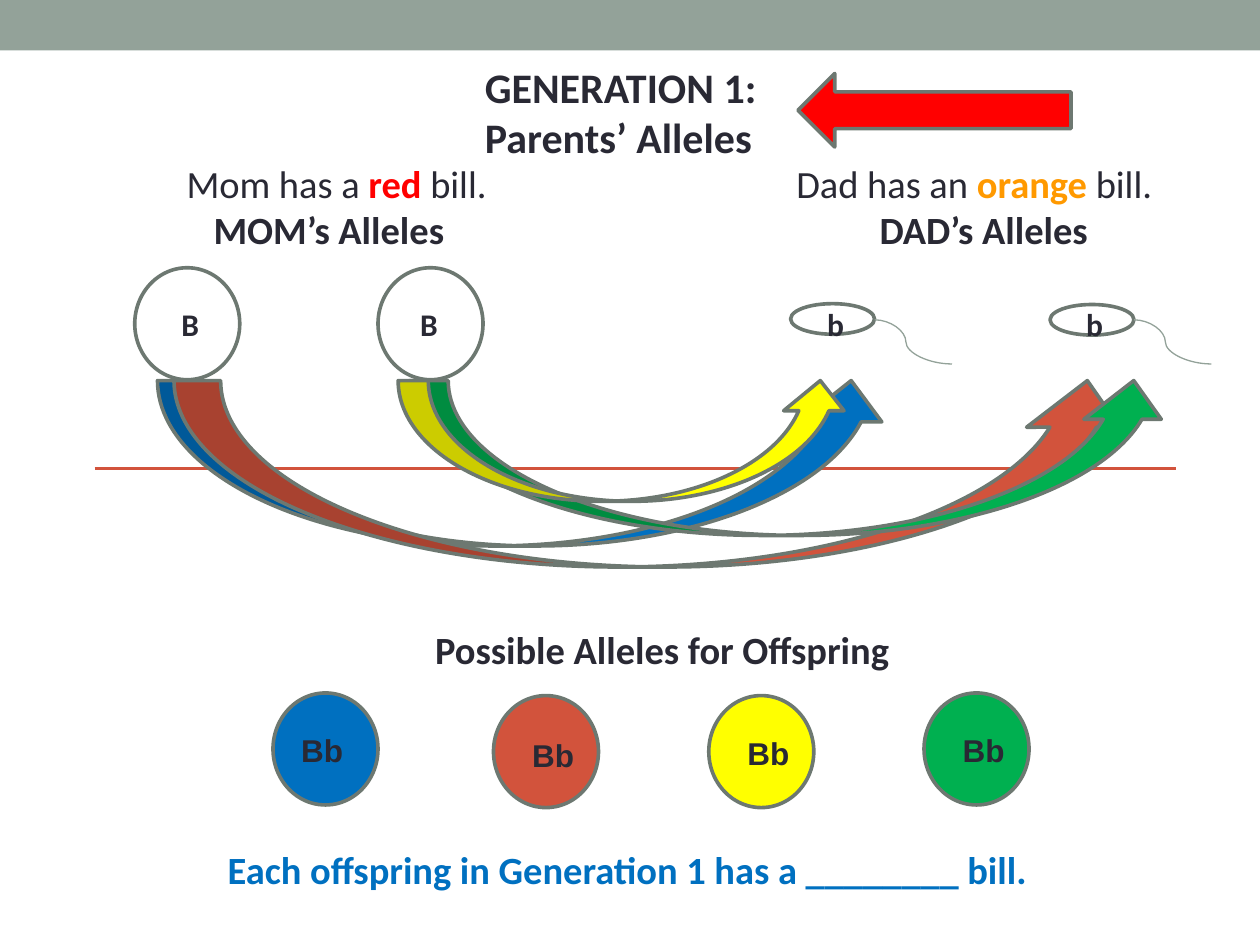
from dataclasses import dataclass
from typing import Optional

import lxml.etree
import pptx
import pptx.dml.color
import pptx.enum.shapes
import pptx.enum.text
import pptx.oxml.ns
import pptx.util

Pt = pptx.util.Pt
RGBColor = pptx.dml.color.RGBColor
Preset = pptx.enum.shapes.MSO_SHAPE
Connector = pptx.enum.shapes.MSO_CONNECTOR
Anchor = pptx.enum.text.MSO_ANCHOR
Align = pptx.enum.text.PP_ALIGN
qn = pptx.oxml.ns.qn

INK = RGBColor(0x29, 0x29, 0x34)
OUTLINE = RGBColor(0x6D, 0x78, 0x71)
SAGE = RGBColor(0x93, 0xA2, 0x99)
BRICK = RGBColor(0xD2, 0x53, 0x3C)
BLUE = RGBColor(0x00, 0x70, 0xC0)
GREEN = RGBColor(0x00, 0xB0, 0x50)
YELLOW = RGBColor(0xFF, 0xFF, 0x00)
RED = RGBColor(0xFF, 0x00, 0x00)
ORANGE = RGBColor(0xFF, 0x99, 0x00)


@dataclass(frozen=True)
class Frame:
    left: float
    top: float
    width: float
    height: float

    def lengths(self) -> tuple:
        return Pt(self.left), Pt(self.top), Pt(self.width), Pt(self.height)


@dataclass(frozen=True)
class Span:
    text: str
    size: float = 22
    color: RGBColor = INK
    bold: bool = True
    font: str = "Calibri"


@dataclass(frozen=True)
class Para:
    spans: tuple
    indent: float = 0
    align: Optional[Align] = None


@dataclass(frozen=True)
class Parent:
    frame: Frame
    opening: str
    bill: str
    bill_color: RGBColor
    bill_indent: float
    heading: str
    heading_indent: float


@dataclass(frozen=True)
class Allele:
    letter: str
    left: float


@dataclass(frozen=True)
class Offspring:
    left: float
    top: float
    label_left: float
    label_top: float
    color: RGBColor


@dataclass(frozen=True)
class Cross:
    frame: Frame
    color: RGBColor


def draw_shape(page, preset: Preset, frame: Frame,
               fill: Optional[RGBColor] = None, outlined: bool = True) -> None:
    shape = page.shapes.add_shape(preset, *frame.lengths())
    shape.shadow.inherit = False
    if fill is None:
        shape.fill.background()
    else:
        shape.fill.solid()
        shape.fill.fore_color.rgb = fill
    if outlined:
        shape.line.color.rgb = OUTLINE
        shape.line.width = Pt(2.08)
    else:
        shape.line.fill.background()


def draw_line(page, kind: Connector, start: tuple, end: tuple,
              color: RGBColor, width: float, bend: Optional[int] = None) -> None:
    line = page.shapes.add_connector(kind, *map(Pt, start + end))
    line.line.color.rgb = color
    line.line.width = Pt(width)
    properties = line._element.spPr
    lxml.etree.SubElement(properties, qn("a:effectLst"))
    if bend is not None:
        guides = properties.find(qn("a:prstGeom")).get_or_add_avLst()
        lxml.etree.SubElement(guides, qn("a:gd"), name="adj1", fmla=f"val {bend}")


def draw_text(page, frame: Frame, paras: tuple, anchor: Anchor = Anchor.MIDDLE) -> None:
    box = page.shapes.add_textbox(*frame.lengths())
    text_frame = box.text_frame
    text_frame.word_wrap = True
    text_frame.vertical_anchor = anchor
    for index, para in enumerate(paras):
        paragraph = text_frame.add_paragraph() if index else text_frame.paragraphs[0]
        properties = paragraph._p.get_or_add_pPr()
        properties.set("marL", str(Pt(para.indent)))
        properties.set("indent", "0")
        if para.align is not None:
            paragraph.alignment = para.align
        for span in para.spans:
            run = paragraph.add_run()
            run.text = span.text
            run.font.name = span.font
            run.font.size = Pt(span.size)
            run.font.bold = span.bold
            run.font.color.rgb = span.color


def draw_parent(page, parent: Parent) -> None:
    draw_text(page, parent.frame, (
        Para((Span(parent.opening, bold=False), Span(parent.bill, color=parent.bill_color),
              Span(" bill.", bold=False)), parent.bill_indent),
        Para((Span(parent.heading),), parent.heading_indent),
    ))


def draw_egg(page, left: float, top: float, fill: Optional[RGBColor] = None) -> None:
    draw_shape(page, Preset.OVAL, Frame(left, top, 60, 64), fill)


def draw_sperm(page, left: float, top: float) -> None:
    draw_shape(page, Preset.OVAL, Frame(left, top, 48, 17.5))
    draw_line(page, Connector.CURVE, (left + 48, 182.75), (left + 92.25, 208),
              SAGE, 0.75, bend=40500)


EGG_LEFTS = (77, 216)
SPERMS = ((600, 174), (451.75, 173.5))
PARENTS = (
    Parent(Frame(24, 87.5, 300, 60.5), "Mom has a ", "red", RED, 75.5,
           "MOM’s Alleles", 91),
    Parent(Frame(424.5, 87.5, 265, 60.5), "Dad has an ", "orange", ORANGE, 23.5,
           "DAD’s Alleles", 71),
)
ALLELES = (Allele("B", 96.5), Allele("B", 233), Allele("b", 465.5), Allele("b", 613.5))
CROSSES = (
    Cross(Frame(90, 217.5, 420, 94.5), BLUE),
    Cross(Frame(99.5, 217.5, 548.5, 106.5), BRICK),
    Cross(Frame(234, 217.5, 436, 88.5), GREEN),
    Cross(Frame(227.5, 217.5, 258.5, 69), YELLOW),
)
OFFSPRING = (
    Offspring(156, 396, 150, 414, BLUE),
    Offspring(282, 397.5, 282, 417.25, BRICK),
    Offspring(405, 397.5, 405, 416, YELLOW),
    Offspring(528, 396, 528, 414, GREEN),
)


def main() -> None:
    deck = pptx.Presentation()
    deck.slide_width, deck.slide_height = Pt(720), Pt(540)
    page = deck.slides.add_slide(deck.slide_layouts[6])

    draw_shape(page, Preset.RECTANGLE, Frame(0, 0, 720, 28.8), SAGE, outlined=False)
    draw_line(page, Connector.STRAIGHT, (54, 267.6), (672, 267.6), BRICK, 1.5)
    for left in EGG_LEFTS:
        draw_egg(page, left, 153)
    for left, top in SPERMS:
        draw_sperm(page, left, top)

    draw_text(page, Frame(234, 31, 222, 65.5), (
        Para((Span("GENERATION 1:", 24),), 36),
        Para((Span("Parents’ Alleles", 24),), 36),
    ))
    for parent in PARENTS:
        draw_parent(page, parent)
    for allele in ALLELES:
        draw_text(page, Frame(allele.left, 170.75, 40, 29),
                  (Para((Span(allele.letter, 18),)),))

    for cross in CROSSES:
        draw_shape(page, Preset.CURVED_UP_ARROW, cross.frame, cross.color)

    draw_text(page, Frame(48.5, 352.25, 610, 37), (
        Para((Span("Possible Alleles for Offspring"),), 193),
    ))
    for child in OFFSPRING:
        draw_egg(page, child.left, child.top, child.color)
        draw_text(page, Frame(child.label_left, child.label_top, 60, 29), (
            Para((Span("Bb", 18, font="Arial"),), 15),
        ), Anchor.TOP)

    draw_text(page, Frame(73, 480, 571, 34), (
        Para((Span("Each offspring in Generation 1 has a ________ bill.", color=BLUE),),
             align=Align.CENTER),
    ), Anchor.TOP)
    draw_shape(page, Preset.LEFT_ARROW, Frame(456, 42, 156, 42), RED)
    deck.save("out.pptx")


if __name__ == "__main__":
    main()
